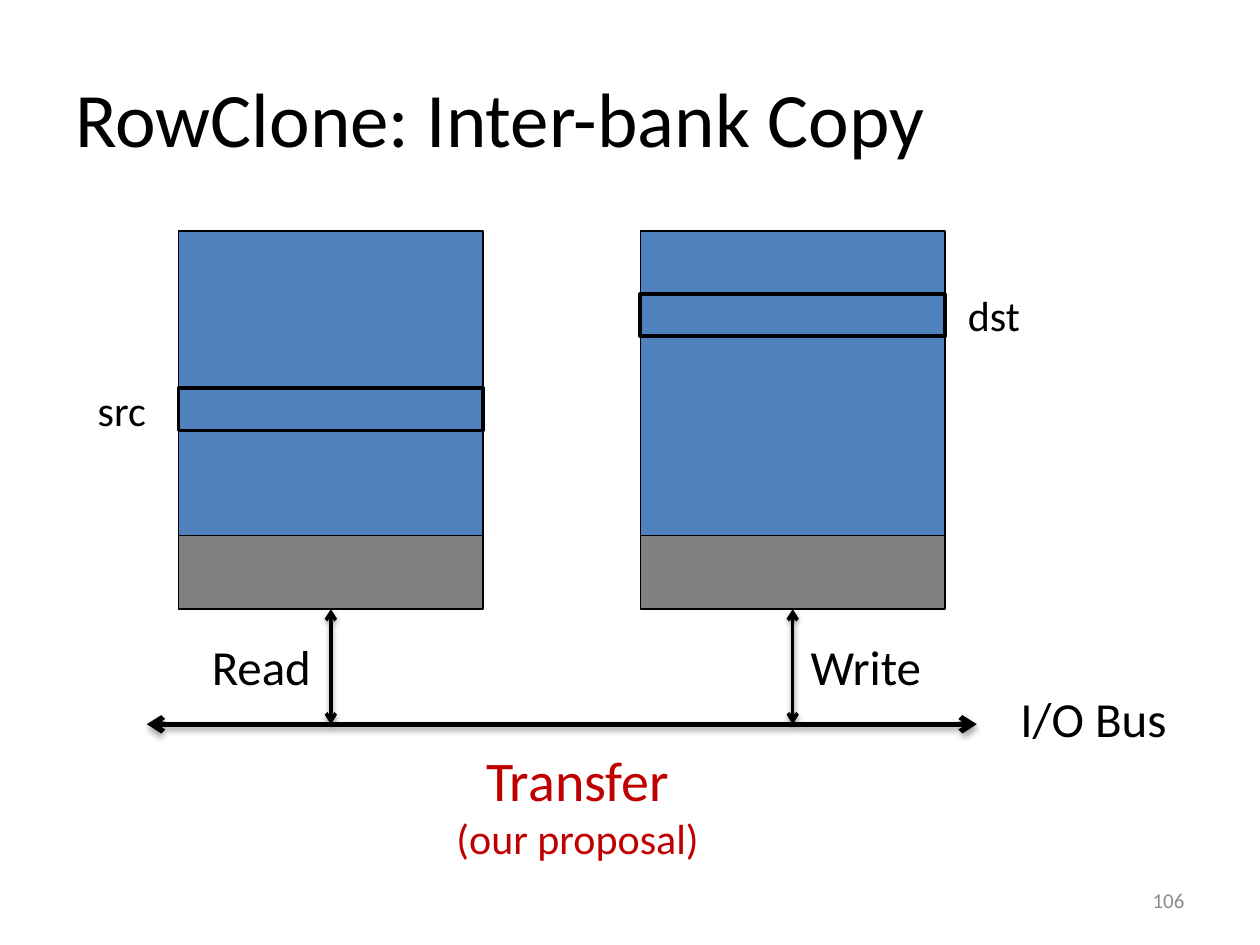
from dataclasses import dataclass

from lxml.etree import SubElement
from pptx import Presentation
from pptx.dml.color import RGBColor
from pptx.enum.shapes import MSO_CONNECTOR as ConnectorKind, MSO_SHAPE as ShapeKind
from pptx.enum.text import MSO_ANCHOR as Anchor, MSO_AUTO_SIZE as AutoSize, PP_ALIGN as Align
from pptx.oxml.ns import qn
from pptx.shapes.autoshape import Shape
from pptx.shapes.connector import Connector
from pptx.slide import Slide
from pptx.util import Cm, Pt


@dataclass(frozen=True)
class Theme:
    font: str = "Calibri"
    ink: str = "000000"
    bank: str = "4F81BD"
    buffer: str = "808080"
    accent: str = "C00000"
    muted: str = "8C8C8C"
    title: int = 44
    heading: int = 32
    body: int = 28
    small: int = 24
    footer: int = 12
    thin_line: float = 0.75
    link_line: float = 2
    row_line: float = 2.25
    bus_line: float = 3


@dataclass(frozen=True)
class Line:
    text: str
    size: int
    color: str


@dataclass(frozen=True)
class Label:
    """Text lines in a box measured in centimetres."""
    left: float
    top: float
    width: float
    height: float
    lines: tuple[Line, ...]
    align: Align = Align.LEFT
    anchor: Anchor = Anchor.TOP
    wrap: bool = False


@dataclass(frozen=True)
class Bank:
    left: float
    row_top: float


THEME = Theme()
BANK_TOP, BANK_SIZE = 4.66, 6.14
BUFFER_HEIGHT, ROW_HEIGHT = 1.48, 0.85
BUS_LEFT, BUS_RIGHT, BUS_TOP = 2.96, 19.69, 14.6

BANKS = (Bank(3.6, 7.83), Bank(12.91, 5.93))


def plain(text: str, size: int) -> tuple[Line, ...]:
    return (Line(text, size, THEME.ink),)


LABELS = (
    Label(1.27, 0.76, 22.86, 3.18, plain("RowClone: Inter-bank Copy", THEME.title),
          anchor=Anchor.MIDDLE, wrap=True),
    Label(20.32, 13.76, 3.5, 1.45, plain("I/O Bus", THEME.body)),
    Label(8.93, 14.9, 5.43, 2.65,
          (Line("Transfer", THEME.heading, THEME.accent),
           Line("(our proposal)", THEME.small, THEME.accent)), Align.CENTER),
    Label(1.72, 7.62, 1.65, 1.28, plain("src", THEME.small)),
    Label(19.26, 5.72, 1.65, 1.28, plain("dst", THEME.small)),
    Label(4.02, 12.7, 2.54, 1.45, plain("Read", THEME.body)),
    Label(16.09, 12.7, 2.77, 1.45, plain("Write", THEME.body)),
    Label(18.2, 17.65, 5.93, 1.01, (Line("106", THEME.footer, THEME.muted),),
          Align.RIGHT, Anchor.MIDDLE, True),
)


def add_block(page: Slide, left: float, top: float, height: float,
              fill: str, line_width: float) -> Shape:
    """Add an outlined rectangle as wide as a bank."""
    block = page.shapes.add_shape(
        ShapeKind.RECTANGLE, Cm(left), Cm(top), Cm(BANK_SIZE), Cm(height))
    block.shadow.inherit = False
    block.fill.solid()
    block.fill.fore_color.rgb = RGBColor.from_string(fill)
    block.line.color.rgb = RGBColor.from_string(THEME.ink)
    block.line.width = Pt(line_width)
    return block


def add_double_arrow(page: Slide, start: tuple[float, float], end: tuple[float, float],
                     width: float, shadow_opacity: int, shadow_distance: float) -> Connector:
    """Add a line with open heads at both ends and a soft shadow below."""
    arrow = page.shapes.add_connector(
        ConnectorKind.STRAIGHT, *(Cm(value) for value in start + end))
    arrow.line.color.rgb = RGBColor.from_string(THEME.ink)
    arrow.line.width = Pt(width)
    outline = arrow.line._get_or_add_ln()
    for tag in ("a:headEnd", "a:tailEnd"):
        SubElement(outline, qn(tag), type="arrow")
    effects = SubElement(arrow._element.spPr, qn("a:effectLst"))
    shadow = SubElement(effects, qn("a:outerShdw"), blurRad=str(Pt(3.1)),
                        dist=str(Pt(shadow_distance)), dir="5400000", rotWithShape="0")
    color = SubElement(shadow, qn("a:srgbClr"), val=THEME.ink)
    SubElement(color, qn("a:alpha"), val=str(shadow_opacity * 1000))
    return arrow


def add_bank(page: Slide, bank: Bank) -> None:
    """Add a memory bank, its row buffer, its marked row and its link to the bus."""
    buffer_top = BANK_TOP + BANK_SIZE
    center = bank.left + BANK_SIZE / 2
    add_block(page, bank.left, BANK_TOP, BANK_SIZE, THEME.bank, THEME.thin_line)
    row_buffer = add_block(page, bank.left, buffer_top, BUFFER_HEIGHT,
                           THEME.buffer, THEME.thin_line)
    add_block(page, bank.left, bank.row_top, ROW_HEIGHT, THEME.bank, THEME.row_line)
    link = add_double_arrow(page, (center, buffer_top + BUFFER_HEIGHT), (center, BUS_TOP),
                            THEME.link_line, 38, 1.6)
    link.begin_connect(row_buffer, 2)


def add_label(page: Slide, label: Label) -> None:
    box = page.shapes.add_textbox(
        Cm(label.left), Cm(label.top), Cm(label.width), Cm(label.height))
    frame = box.text_frame
    frame.word_wrap = label.wrap
    frame.auto_size = AutoSize.NONE if label.wrap else AutoSize.SHAPE_TO_FIT_TEXT
    frame.vertical_anchor = label.anchor
    for index, line in enumerate(label.lines):
        para = frame.add_paragraph() if index else frame.paragraphs[0]
        para.alignment = label.align
        span = para.add_run()
        span.text = line.text
        span.font.name = THEME.font
        span.font.size = Pt(line.size)
        span.font.color.rgb = RGBColor.from_string(line.color)


def main() -> None:
    deck = Presentation()
    deck.slide_width, deck.slide_height = Cm(25.4), Cm(19.05)
    page = deck.slides.add_slide(deck.slide_layouts[6])
    for bank in BANKS:
        add_bank(page, bank)
    add_double_arrow(page, (BUS_LEFT, BUS_TOP), (BUS_RIGHT, BUS_TOP),
                     THEME.bus_line, 35, 1.8)
    for label in LABELS:
        add_label(page, label)
    deck.save("out.pptx")


if __name__ == "__main__":
    main()
